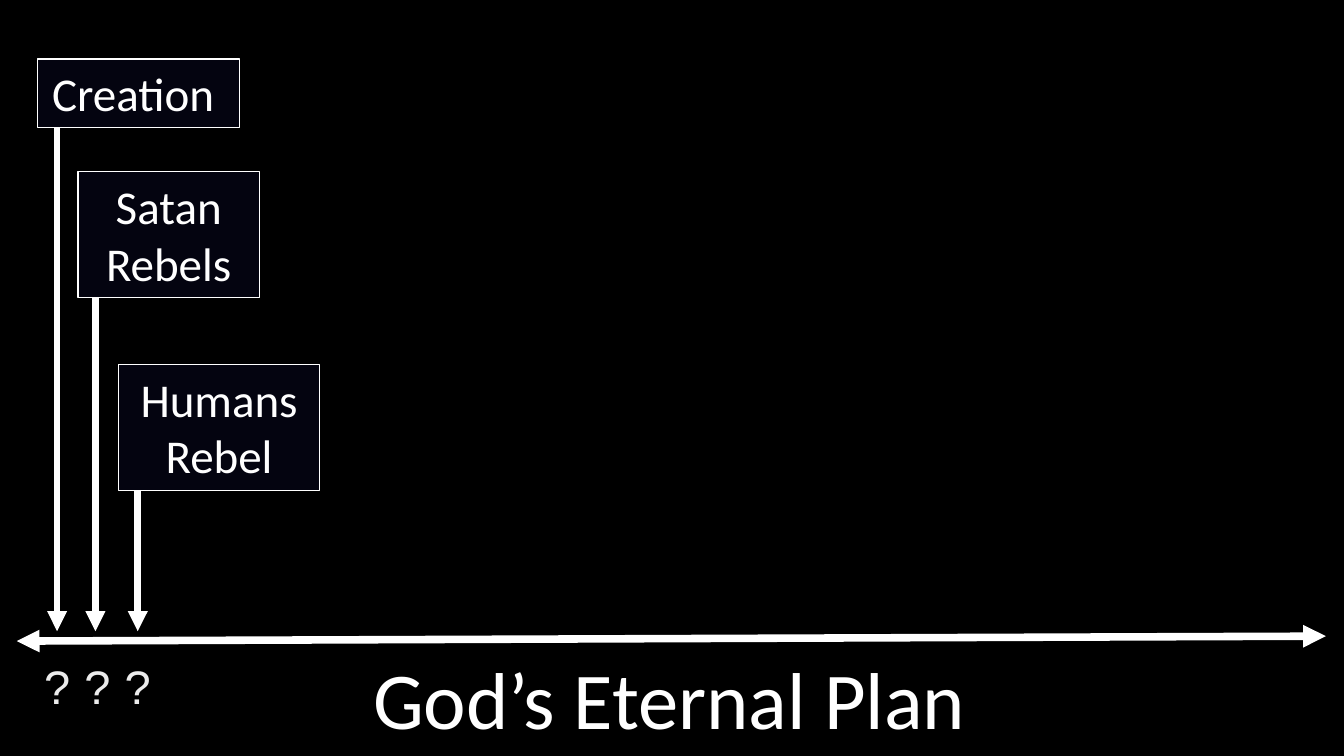
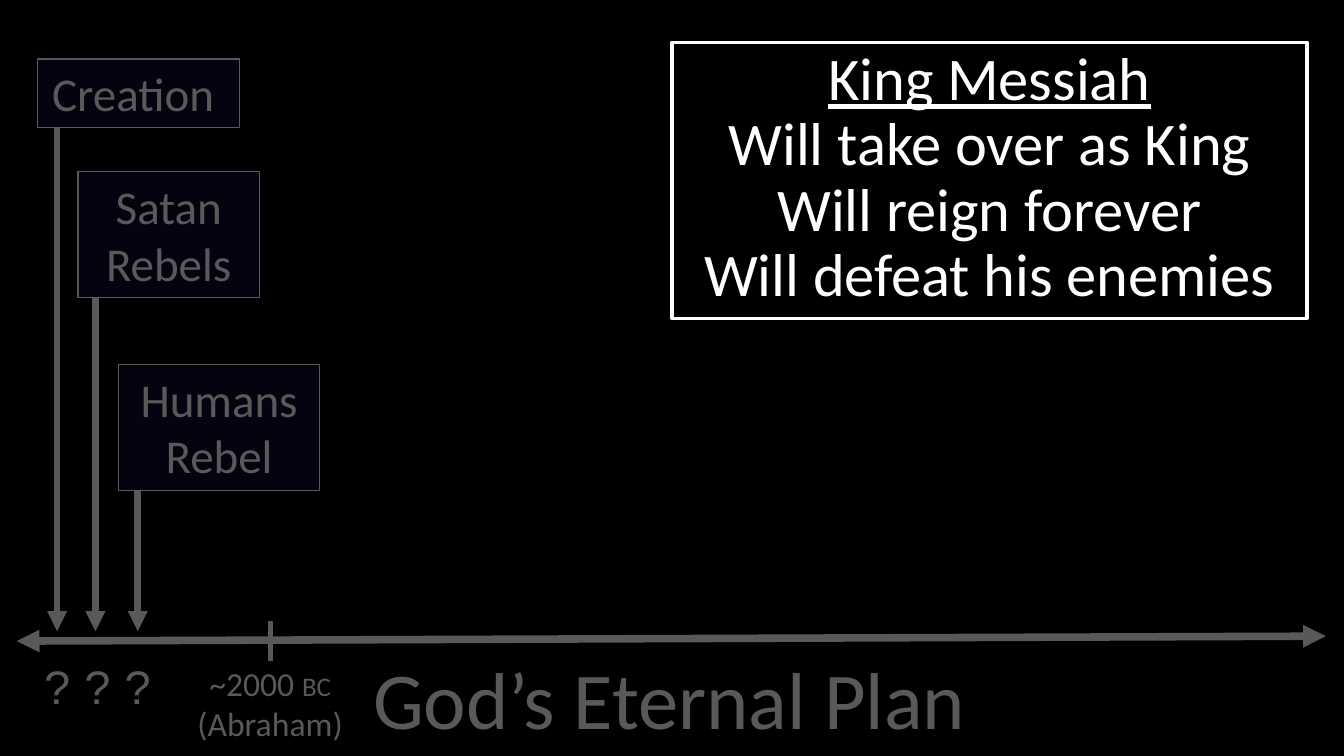
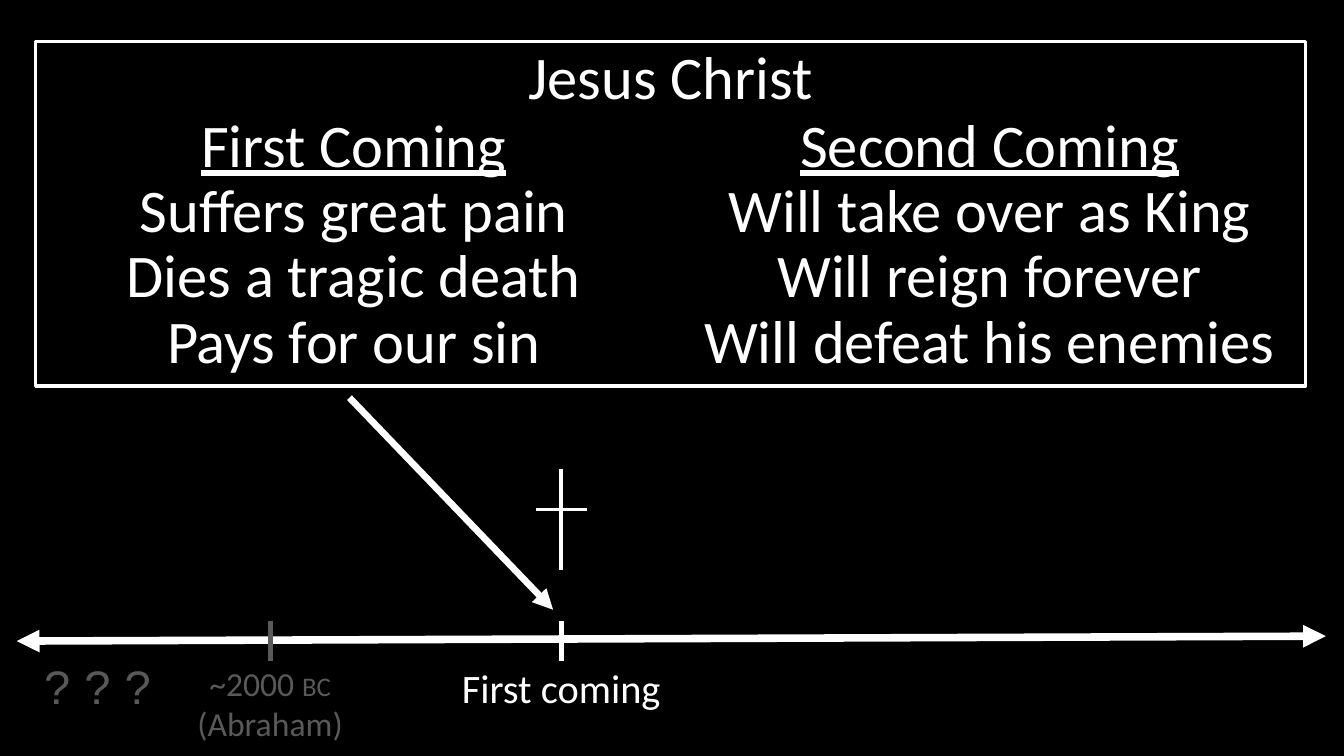
import dataclasses
import typing

import lxml.etree
import pptx
import pptx.dml.color
import pptx.enum.shapes
import pptx.enum.text
import pptx.oxml.ns
import pptx.util


@dataclasses.dataclass(frozen=True)
class Theme:
    background: str = "000000"
    bright: str = "FFFFFF"
    soft: str = "ECECEC"
    dim: str = "595959"
    event_fill: str = "040410"
    font: str = "Calibri"
    question_font: str = "Arial"
    title_size: float = 48
    panel_size: float = 36
    event_size: float = 28
    label_size: float = 24
    date_size: float = 20
    timeline_line: float = 4.5
    arrow_line: float = 4
    tick_line: float = 3
    panel_line: float = 2
    event_line: float = 0.75


class Box(typing.NamedTuple):
    column: float
    row: float
    columns: float
    rows: float


class Point(typing.NamedTuple):
    column: float
    row: float


class Run(typing.NamedTuple):
    text: str
    underline: bool = False
    small_caps: bool = False


class Style(typing.NamedTuple):
    size: float
    color: str
    font: str = "Calibri"
    spacing: float = 1.0


@dataclasses.dataclass(frozen=True)
class Event:
    text: str
    box: Box
    arrow_column: float


@dataclasses.dataclass(frozen=True)
class Milestone:
    column: float
    lines: list[list[Run]]
    size: float
    rows: float


THEME = Theme()
SLIDE_WIDTH = pptx.util.Inches(11.11)
SLIDE_HEIGHT = pptx.util.Inches(6.25)
GRID = 100

TITLE_BOX = Box(0.6, 86.1, 98.4, 12.2)
TIMELINE = (Point(1.25, 84.8), Point(98.65, 84.15))
ARROW_END_ROW = 83.5
TICK_ROWS = (82.2, 87.4)
LABEL_ROW = 86.9
LABEL_COLUMNS = 17
QUESTION_BOX = Box(2, 86.2, 4.5, 9.1)
EVENT_STEP = 3
PANEL_SIZE = (47.25, 36.5)

EVENTS = [
    Event("Creation ", Box(2.8, 7.8, 15, 9.1), 4.25),
    Event("Satan Rebels", Box(5.8, 22.7, 13.5, 16.7), 7.1),
    Event("Humans Rebel", Box(8.8, 48.2, 15, 16.7), 10.25),
]
ABRAHAM = Milestone(
    20.1, [[Run("~2000 "), Run("bc", small_caps=True)], [Run("(Abraham)")]], THEME.date_size, 12.3
)
FIRST_COMING = Milestone(41.75, [[Run("First coming")]], THEME.label_size, 8.2)
REIGN = ["Will take over as King", "Will reign forever", "Will defeat his enemies"]
SUFFERING = ["Suffers great pain", "Dies a tragic death", "Pays for our sin"]


def across(columns: float) -> int:
    return round(SLIDE_WIDTH * columns / GRID)


def down(rows: float) -> int:
    return round(SLIDE_HEIGHT * rows / GRID)


def place(box: Box) -> tuple[int, int, int, int]:
    return across(box.column), down(box.row), across(box.columns), down(box.rows)


def rgb(color: str) -> pptx.dml.color.RGBColor:
    return pptx.dml.color.RGBColor.from_string(color)


def write(shape, lines: list[list[Run]], style: Style, middle: bool = False) -> None:
    frame = shape.text_frame
    frame.word_wrap = True
    anchors = pptx.enum.text.MSO_ANCHOR
    frame.vertical_anchor = anchors.MIDDLE if middle else anchors.TOP
    for index, line in enumerate(lines):
        paragraph = frame.add_paragraph() if index else frame.paragraphs[0]
        paragraph.alignment = pptx.enum.text.PP_ALIGN.CENTER
        paragraph.line_spacing = style.spacing
        for part in line:
            run = paragraph.add_run()
            run.text = part.text
            run.font.name = style.font
            run.font.size = pptx.util.Pt(style.size)
            run.font.color.rgb = rgb(style.color)
            if part.underline:
                run.font.underline = True
            if part.small_caps:
                run.font._element.set("cap", "small")


def add_text(slide, box: Box, lines: list[list[Run]], style: Style, middle: bool = False) -> None:
    write(slide.shapes.add_textbox(*place(box)), lines, style, middle)


def add_box(
    slide,
    box: Box,
    lines: list[list[Run]],
    style: Style,
    fill: str | None = None,
    line: tuple[str, float] | None = None,
    panel: bool = False,
) -> None:
    presets = pptx.enum.shapes.MSO_SHAPE
    preset = presets.ROUNDED_RECTANGLE if panel else presets.RECTANGLE
    shape = slide.shapes.add_shape(preset, *place(box))
    shape.shadow.inherit = False
    if panel:
        shape.adjustments[0] = 0
    if fill:
        shape.fill.solid()
        shape.fill.fore_color.rgb = rgb(fill)
    else:
        shape.fill.background()
    if line:
        shape.line.color.rgb = rgb(line[0])
        shape.line.width = pptx.util.Pt(line[1])
    else:
        shape.line.fill.background()
    write(shape, lines, style)


def add_line(
    slide, start: Point, end: Point, color: str, width: float, arrowheads: tuple[str, ...] = ()
) -> None:
    connector = slide.shapes.add_connector(
        pptx.enum.shapes.MSO_CONNECTOR.STRAIGHT,
        across(start.column), down(start.row), across(end.column), down(end.row),
    )
    connector.line.color.rgb = rgb(color)
    connector.line.width = pptx.util.Pt(width)
    properties = connector.element.spPr
    for arrowhead in arrowheads:
        lxml.etree.SubElement(
            properties.get_or_add_ln(), pptx.oxml.ns.qn(f"a:{arrowhead}"), type="triangle"
        )
    lxml.etree.SubElement(properties, pptx.oxml.ns.qn("a:effectLst"))


def add_slide(presentation):
    slide = presentation.slides.add_slide(presentation.slide_layouts[6])
    slide.background.fill.solid()
    slide.background.fill.fore_color.rgb = rgb(THEME.background)
    return slide


def add_timeline(slide, color: str, question_color: str) -> None:
    add_line(slide, *TIMELINE, color, THEME.timeline_line, ("headEnd", "tailEnd"))
    style = Style(THEME.event_size, question_color, THEME.question_font)
    for index in range(len(EVENTS)):
        box = QUESTION_BOX._replace(column=QUESTION_BOX.column + index * EVENT_STEP)
        add_text(slide, box, [[Run("?")]], style)


def add_plan(slide, color: str, question_color: str) -> None:
    title_style = Style(THEME.title_size, color, THEME.font)
    add_text(slide, TITLE_BOX, [[Run("God’s Eternal Plan")]], title_style, middle=True)
    add_timeline(slide, color, question_color)
    for event in EVENTS:
        box = event.box
        style = Style(THEME.event_size, color, THEME.font)
        add_box(slide, box, [[Run(event.text)]], style, THEME.event_fill, (color, THEME.event_line))
        start = Point(event.arrow_column, box.row + box.rows)
        end = Point(event.arrow_column, ARROW_END_ROW)
        add_line(slide, start, end, color, THEME.arrow_line, ("tailEnd",))


def add_milestone(slide, milestone: Milestone, color: str) -> None:
    top, bottom = (Point(milestone.column, row) for row in TICK_ROWS)
    add_line(slide, top, bottom, color, THEME.tick_line)
    box = Box(milestone.column - LABEL_COLUMNS / 2, LABEL_ROW, LABEL_COLUMNS, milestone.rows)
    add_text(slide, box, milestone.lines, Style(milestone.size, color, THEME.font))


def panel_style() -> Style:
    return Style(THEME.panel_size, THEME.bright, THEME.font, 0.9)


def add_panel(
    slide, corner: Point, heading: str, items: list[str], line: tuple[str, float] | None = None
) -> None:
    lines = [[Run(heading, underline=True)], *([Run(item)] for item in items)]
    box = Box(*corner, *PANEL_SIZE)
    add_box(slide, box, lines, panel_style(), THEME.background, line, panel=True)


def add_cross(slide, column: float) -> None:
    for start, end in (
        (Point(column, 62.1), Point(column, 75.4)),
        (Point(column - 1.9, 67.4), Point(column + 1.9, 67.4)),
    ):
        add_line(slide, start, end, THEME.bright, THEME.panel_line)


def build_beginnings(presentation) -> None:
    add_plan(add_slide(presentation), THEME.bright, THEME.soft)


def build_king_messiah(presentation) -> None:
    slide = add_slide(presentation)
    add_plan(slide, THEME.dim, THEME.dim)
    add_panel(slide, Point(50, 5.6), "King Messiah", REIGN, (THEME.bright, THEME.panel_line))
    add_milestone(slide, ABRAHAM, THEME.dim)


def build_two_comings(presentation) -> None:
    slide = add_slide(presentation)
    add_timeline(slide, THEME.bright, THEME.dim)
    add_milestone(slide, ABRAHAM, THEME.dim)
    add_panel(slide, Point(50, 14.4), "Second Coming", REIGN)
    add_panel(slide, Point(2.7, 14.4), "First Coming", SUFFERING)
    add_box(
        slide, Box(2.65, 5.45, 94.5, 45.6), [[Run("Jesus Christ")]], panel_style(),
        line=(THEME.bright, THEME.panel_line), panel=True,
    )
    add_milestone(slide, FIRST_COMING, THEME.bright)
    add_line(
        slide, Point(26, 52.6), Point(41.15, 80.65), THEME.bright, THEME.arrow_line, ("tailEnd",)
    )
    add_cross(slide, FIRST_COMING.column)


def main() -> None:
    presentation = pptx.Presentation()
    presentation.slide_width = SLIDE_WIDTH
    presentation.slide_height = SLIDE_HEIGHT
    build_beginnings(presentation)
    build_king_messiah(presentation)
    build_two_comings(presentation)
    presentation.save("out.pptx")


if __name__ == "__main__":
    main()
